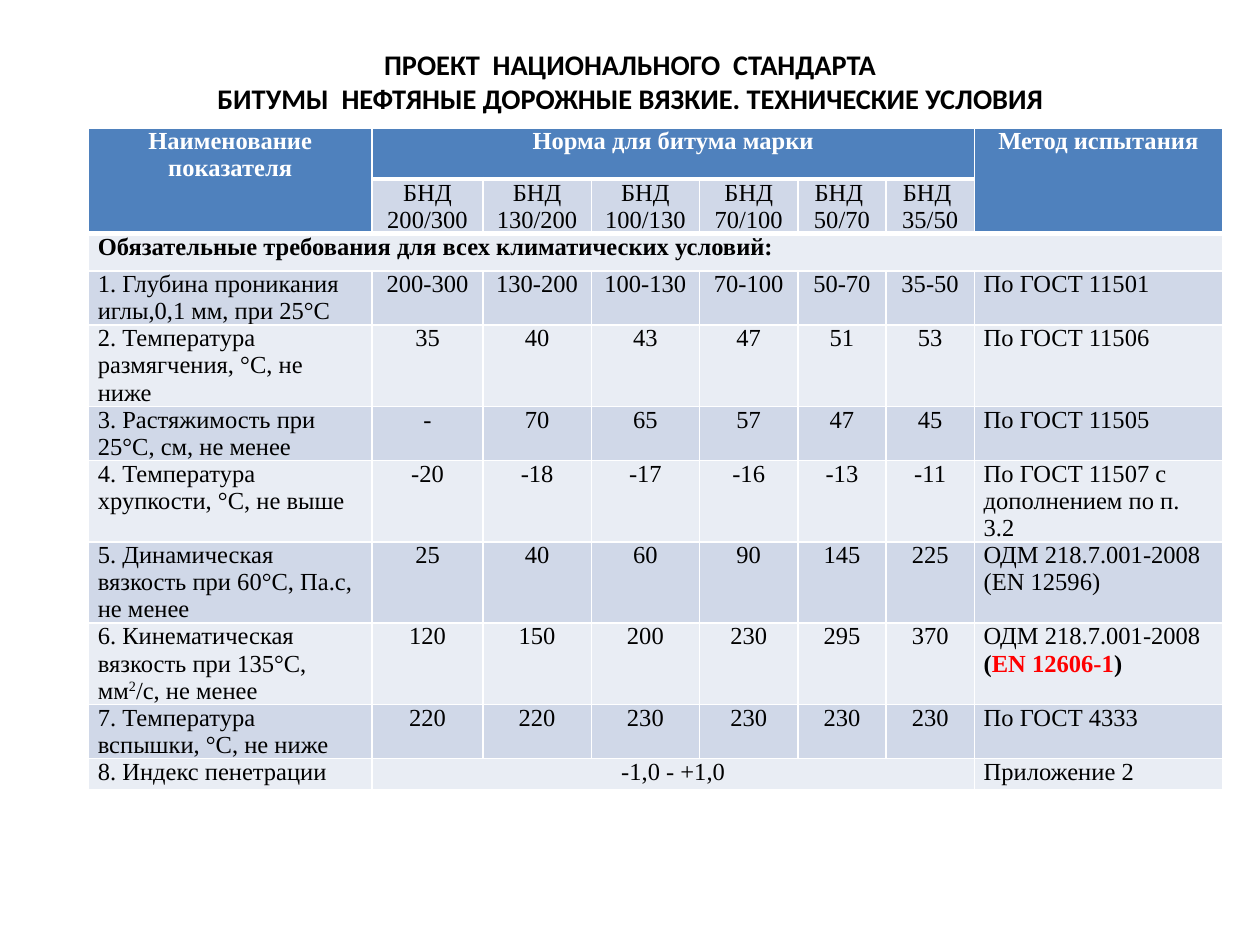
from copy import deepcopy
from lxml import etree
from pptx import Presentation
from pptx.dml.color import RGBColor
from pptx.enum.text import MSO_ANCHOR, MSO_AUTO_SIZE, PP_ALIGN
from pptx.oxml.ns import qn
from pptx.util import Pt

LEFT, CENTER = PP_ALIGN.LEFT, PP_ALIGN.CENTER
MIDDLE, NO_FIT = MSO_ANCHOR.MIDDLE, MSO_AUTO_SIZE.NONE
WHITE, BLACK, RED = "FFFFFF", "000000", "FF0000"
HEAD, DARK, LIGHT = "4F81BD", "D0D8E8", "E9EDF4"

# Content: a newline parts paragraphs; a list holds (text, style) runs
TITLE = ("ПРОЕКТ  НАЦИОНАЛЬНОГО  СТАНДАРТА\v"
         "БИТУМЫ  НЕФТЯНЫЕ ДОРОЖНЫЕ ВЯЗКИЕ. ТЕХНИЧЕСКИЕ УСЛОВИЯ\v")
ROWS = [
    ["Наименование показателя", "Норма для битума марки", "", "", "", "", "",
     "Метод испытания"],
    ["", "БНД 200/300", "БНД 130/200", "БНД 100/130", "БНД 70/100",
     "БНД \n50/70", "БНД \n35/50", ""],
    ["Обязательные требования для всех климатических условий:"] + [""] * 7,
    ["1. Глубина проникания иглы,0,1 мм, при 25°С", "200-300", "130-200",
     "100-130", "70-100", "50-70", "35-50", "По ГОСТ 11501"],
    ["2. Температура размягчения, °С, не ниже",
     "35", "40", "43", "47", "51", "53", "По ГОСТ 11506"],
    ["3. Растяжимость при 25°С, см, не менее",
     "-", "70", "65", "57", "47", "45", "По ГОСТ 11505"],
    ["4. Температура хрупкости, °С, не выше", "-20", "-18", "-17", "-16",
     "-13", "-11", "По ГОСТ 11507 с дополнением по п. 3.2"],
    ["5. Динамическая вязкость при 60°С, Па.с, не менее", "25", "40", "60",
     "90", "145", "225", "ОДМ 218.7.001-2008\n(EN 12596)"],
    [[("6. Кинематическая вязкость при 135°С, мм", ""), ("2", "super"),
      ("/с, не менее", "")], "120", "150", "200", "230", "295", "370",
     [("ОДМ 218.7.001-2008\n", ""), ("(", "bold"), ("EN 12606-1", "red"),
      (")", "bold")]],
    ["7. Температура вспышки, °С, не ниже",
     "220", "220", "230", "230", "230", "230", "По ГОСТ 4333"],
    ["8. Индекс пенетрации", "-1,0 - +1,0", "", "", "", "", "",
     "Приложение 2"],
]
COLS = [162.1, 63.4, 61.9, 61.9, 56.2, 50.4, 50.4, 141.9]
HIGH = [29.2] * 2 + [21.4] + [29.2] * 7 + [18]
# First and last cell of each merged area
SPANS = [((0, 0), (1, 0)), ((0, 1), (0, 6)), ((0, 7), (1, 7)),
         ((2, 0), (2, 7)), ((10, 1), (10, 6))]


def paint(font, name, size, color, bold):
    font.name, font.size, font.bold = name, Pt(size), bold
    font.color.rgb = RGBColor.from_string(color)


def edge(cell, side, width):
    line = etree.SubElement(cell._tc.get_or_add_tcPr(), qn("a:ln" + side),
                            w=str(Pt(width)))
    fill = etree.SubElement(line, qn("a:solidFill"))
    etree.SubElement(fill, qn("a:srgbClr"), val=WHITE)


def write(cell, text, align, color, bold):
    runs = text if isinstance(text, list) else [(text, "")]
    para = cell.text_frame.paragraphs[0]
    para.alignment = align
    for words, style in runs:
        for num, part in enumerate(words.split("\n")):
            if num:
                para = cell.text_frame.add_paragraph()
                para.alignment = align
            if not part:
                continue
            run = para.add_run()
            run.text = part
            paint(run.font, "Times New Roman", 14,
                  RED if style == "red" else color,
                  bold or style in ("bold", "red"))
            if style == "super":
                run._r.get_or_add_rPr().set("baseline", "30000")


def dress(cell, row, col):
    head = row == 0 or (row == 1 and col in (0, 7))
    for side in "LRTB":
        edge(cell, side, 3 if head and side == "B" else 1)
    shade = HEAD if head else DARK if row % 2 else LIGHT
    cell.fill.solid()
    cell.fill.fore_color.rgb = RGBColor.from_string(shade)
    cell.margin_left = cell.margin_right = Pt(5.4)
    cell.margin_top = cell.margin_bottom = 0
    side = LEFT if row > 1 and col in (0, 7) else CENTER
    write(cell, ROWS[row][col], side, WHITE if head else BLACK,
          head or row == 2)


deck = Presentation()
deck.slide_width, deck.slide_height = Pt(720), Pt(540)
slide = deck.slides.add_slide(deck.slide_layouts[5])

# Title
title = slide.shapes.title
title.left, title.top, title.width, title.height = map(
    Pt, (36, 22, 648, 68.4))
frame = title.text_frame
frame.text = TITLE
frame.auto_size, frame.vertical_anchor = NO_FIT, MIDDLE
para = frame.paragraphs[0]
para.alignment = CENTER
for run in para.runs:
    paint(run.font, "Calibri", 16.2, BLACK, True)

# Line breaks and the closing line take the size of the title text
look = para.runs[0]._r.get_or_add_rPr()
for gap in para._p.findall(qn("a:br")):
    gap.append(deepcopy(look))
last = deepcopy(look)
last.tag = qn("a:endParaRPr")
para._p.append(last)

# Table
table = slide.shapes.add_table(len(ROWS), len(COLS), Pt(50.5), Pt(73.2),
                               Pt(sum(COLS)), Pt(sum(HIGH))).table
for col, width in zip(table.columns, COLS):
    col.width = Pt(width)
for row, height in zip(table.rows, HIGH):
    row.height = Pt(height)
for row in range(len(ROWS)):
    for col in range(len(COLS)):
        dress(table.cell(row, col), row, col)
for first, end in SPANS:
    table.cell(*first).merge(table.cell(*end))

deck.save("out.pptx")
